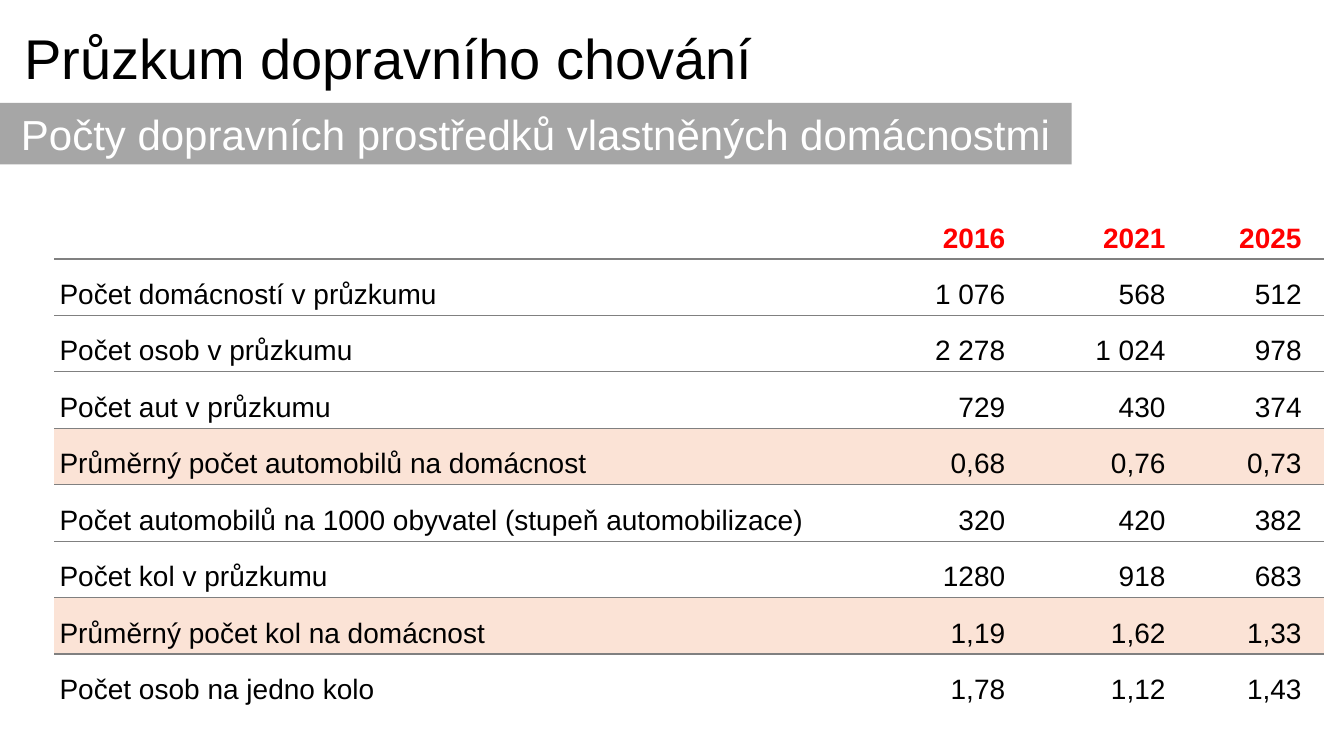
from lxml.etree import SubElement
from pptx import Presentation
from pptx.dml.color import RGBColor
from pptx.enum.shapes import MSO_SHAPE
from pptx.enum.text import MSO_ANCHOR, MSO_AUTO_SIZE, PP_ALIGN
from pptx.oxml import parse_xml
from pptx.oxml.ns import nsdecls, qn
from pptx.util import Inches, Pt

BLACK = RGBColor(0x00, 0x00, 0x00)
WHITE = RGBColor(0xFF, 0xFF, 0xFF)
RED = RGBColor(0xFF, 0x00, 0x00)
GRAY = RGBColor(0xA6, 0xA6, 0xA6)
RULE = RGBColor(0x80, 0x80, 0x80)
PEACH = RGBColor(0xFB, 0xE3, 0xD6)
FONT = "Arial"
PLAIN_TABLE_STYLE = "{2D5ABB26-0587-4C30-8999-92F81FD0307C}"

COLUMN_WIDTHS = [2.96, 5.38, 1.31, 1.59, 1.35]
ROW_HEIGHT = 0.56
YEARS = ["2016", "2021", "2025"]
SURVEY_ROWS = [
    ("Počet domácností v průzkumu", "1 076", "568", "512"),
    ("Počet osob v průzkumu", "2 278", "1 024", "978"),
    ("Počet aut v průzkumu", "729", "430", "374"),
    ("Průměrný počet automobilů na domácnost", "0,68", "0,76", "0,73"),
    ("Počet automobilů na 1000 obyvatel (stupeň automobilizace)", "320", "420", "382"),
    ("Počet kol v průzkumu", "1280", "918", "683"),
    ("Průměrný počet kol na domácnost", "1,19", "1,62", "1,33"),
    ("Počet osob na jedno kolo", "1,78", "1,12", "1,43"),
]
HIGHLIGHTED_ROWS = {4, 7}


def write_text(frame, text, size, color=BLACK, bold=False, align=PP_ALIGN.LEFT):
    paragraph = frame.paragraphs[0]
    paragraph.alignment = align
    span = paragraph.add_run()
    span.text = text
    span.font.name = FONT
    span.font.size = Pt(size)
    span.font.bold = bold
    span.font.color.rgb = color
    return paragraph


def add_title(page, left, top, width, height):
    title = page.shapes.title
    title.left, title.top = Inches(left), Inches(top)
    title.width, title.height = Inches(width), Inches(height)
    frame = title.text_frame
    frame.auto_size = MSO_AUTO_SIZE.NONE
    frame.vertical_anchor = MSO_ANCHOR.MIDDLE
    write_text(frame, "Průzkum dopravního chování", 40)


def add_subtitle_bar(page, left, top, width, height):
    bar = page.shapes.add_shape(
        MSO_SHAPE.RECTANGLE, Inches(left), Inches(top), Inches(width), Inches(height)
    )
    bar.shadow.inherit = False
    bar.fill.solid()
    bar.fill.fore_color.rgb = GRAY
    bar.line.fill.background()
    frame = bar.text_frame
    frame.word_wrap = False
    frame.vertical_anchor = MSO_ANCHOR.MIDDLE
    write_text(frame, "Počty dopravních prostředků vlastněných domácnostmi", 30,
               color=WHITE, align=PP_ALIGN.CENTER)


def add_bottom_rule(cell):
    rule = parse_xml(f'<a:lnB {nsdecls("a")} w="{Pt(1)}"/>')
    fill = SubElement(rule, qn("a:solidFill"))
    SubElement(fill, qn("a:srgbClr"), val=str(RULE))
    cell._tc.get_or_add_tcPr().insert(0, rule)


def fill_cell(cell, text, **text_format):
    cell.vertical_anchor = MSO_ANCHOR.BOTTOM
    cell.margin_left = cell.margin_top = cell.margin_bottom = Inches(0.05)
    is_number = text_format.get("align") == PP_ALIGN.RIGHT
    cell.margin_right = Inches(0.22 if is_number else 0.05)
    paragraph = write_text(cell.text_frame, text, 20, **text_format)
    paragraph.line_spacing = Pt(14)
    paragraph.space_after = Pt(6)


def add_survey_table(page, left, top):
    row_count = len(SURVEY_ROWS) + 1
    frame = page.shapes.add_table(
        row_count, len(COLUMN_WIDTHS), Inches(left), Inches(top),
        Inches(sum(COLUMN_WIDTHS)), Inches(ROW_HEIGHT * row_count)
    )
    table = frame.table
    table.first_row = table.horz_banding = False
    table._tbl.tblPr.find(qn("a:tableStyleId")).text = PLAIN_TABLE_STYLE
    for column, width in zip(table.columns, COLUMN_WIDTHS):
        column.width = Inches(width)

    for index, row in enumerate(table.rows):
        row.height = Inches(ROW_HEIGHT)
        for cell in row.cells:
            if index in HIGHLIGHTED_ROWS:
                cell.fill.solid()
                cell.fill.fore_color.rgb = PEACH
            else:
                cell.fill.background()
            if index < row_count - 1:
                add_bottom_rule(cell)

    for column, year in enumerate(YEARS, start=2):
        fill_cell(table.cell(0, column), year, color=RED, bold=True, align=PP_ALIGN.RIGHT)
    for index, (label, *values) in enumerate(SURVEY_ROWS, start=1):
        table.cell(index, 0).merge(table.cell(index, 1))
        fill_cell(table.cell(index, 0), label)
        for column, value in enumerate(values, start=2):
            fill_cell(table.cell(index, column), value, align=PP_ALIGN.RIGHT)


def main():
    deck = Presentation()
    deck.slide_width, deck.slide_height = Inches(13.33), Inches(7.5)
    page = deck.slides.add_slide(deck.slide_layouts[5])
    add_survey_table(page, 0.54, 2.01)
    add_title(page, 0.14, 0.18, 10.49, 0.77)
    add_subtitle_bar(page, 0, 1.02, 10.63, 0.61)
    deck.save("out.pptx")


if __name__ == "__main__":
    main()
